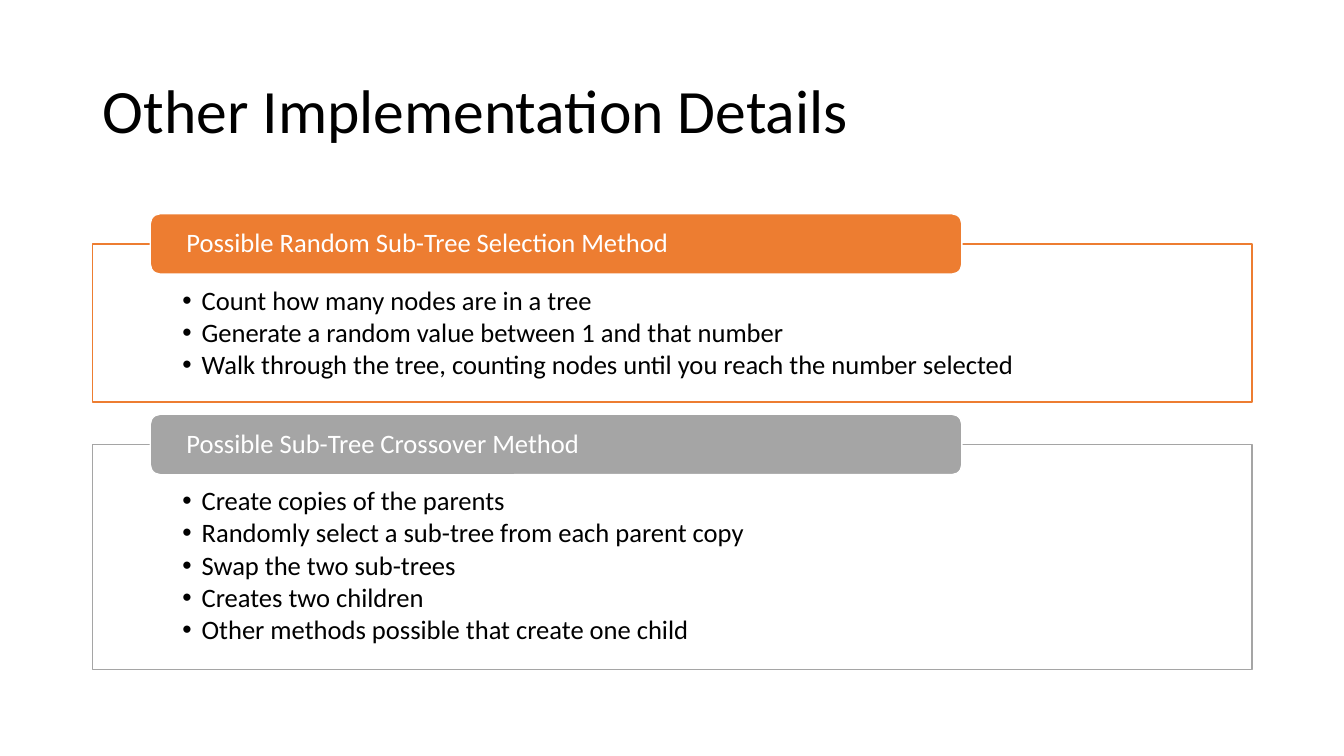
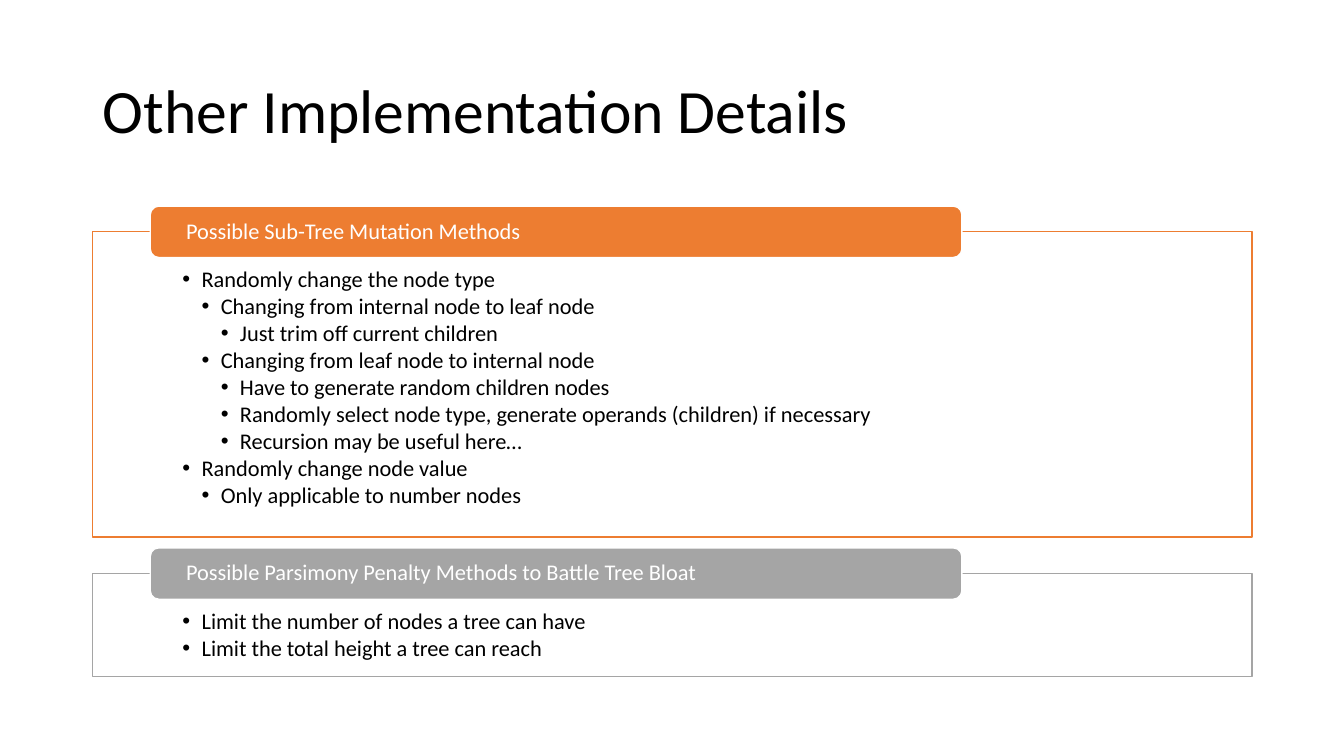
"""Build two slides of outlined boxes with titled tabs."""
from dataclasses import dataclass

from lxml import etree
from pptx import Presentation
from pptx.dml.color import RGBColor
from pptx.enum.shapes import MSO_SHAPE
from pptx.enum.text import MSO_ANCHOR, MSO_AUTO_SIZE, PP_ALIGN
from pptx.oxml.ns import qn
from pptx.util import Inches, Pt

RECT = MSO_SHAPE.RECTANGLE
ROUND = MSO_SHAPE.ROUNDED_RECTANGLE
TOP, MIDDLE = MSO_ANCHOR.TOP, MSO_ANCHOR.MIDDLE
LEFT = PP_ALIGN.LEFT
NO_FIT = MSO_AUTO_SIZE.NONE


@dataclass(frozen=True)
class Theme:
    """Colours, font and sizes shared by the slides."""
    font: str = "Calibri"
    black: str = "000000"
    white: str = "FFFFFF"
    accents: tuple = ("ED7D31", "A5A5A5")
    title: int = 44
    spacing: float = 0.9
    gap: float = 0.13
    indent: float = 0.19
    margin: float = 0.92
    width: float = 11.5


@dataclass(frozen=True)
class Scale:
    """Type size and the lengths in inches that follow from it."""
    size: int
    tab: float
    head: float
    foot: float


@dataclass(frozen=True)
class Panel:
    """One box: its top, height, tab text and (level, text) items."""
    top: float
    height: float
    label: str
    items: tuple


@dataclass(frozen=True)
class Page:
    """One slide: title, scale and panels."""
    title: str
    scale: Scale
    panels: tuple


THEME = Theme()
LARGE = Scale(19, 0.6, 0.43, 0.15)
SMALL = Scale(16, 0.51, 0.36, 0.12)

PAGES = (
    Page("Other Implementation Details", LARGE, (
        Panel(2.42, 1.57, "Possible Random Sub-Tree Selection Method", (
            (1, "Count how many nodes are in a tree"),
            (1, "Generate a random value between 1 and that number"),
            (1, "Walk through the tree, counting nodes until you reach the number selected"),
        )),
        Panel(4.41, 2.23, "Possible Sub-Tree Crossover Method", (
            (1, "Create copies of the parents"),
            (1, "Randomly select a sub-tree from each parent copy"),
            (1, "Swap the two sub-trees"),
            (1, "Creates two children"),
            (1, "Other methods possible that create one child"),
        )),
    )),
    Page("Other Implementation Details", SMALL, (
        Panel(2.3, 3.03, "Possible Sub-Tree Mutation Methods", (
            (1, "Randomly change the node type"),
            (2, "Changing from internal node to leaf node"),
            (3, "Just trim off current children"),
            (2, "Changing from leaf node to internal node"),
            (3, "Have to generate random children nodes"),
            (3, "Randomly select node type, generate operands (children) if necessary"),
            (3, "Recursion may be useful here…"),
            (1, "Randomly change node value"),
            (2, "Only applicable to number nodes"),
        )),
        Panel(5.69, 1.02, "Possible Parsimony Penalty Methods to Battle Tree Bloat", (
            (1, "Limit the number of nodes a tree can have"),
            (1, "Limit the total height a tree can reach"),
        )),
    )),
)


def style(para, size: int, color: str) -> None:
    """Set a paragraph's font, alignment and line spacing."""
    para.alignment = LEFT
    para.line_spacing = THEME.spacing
    para.font.name = THEME.font
    para.font.size = Pt(size)
    para.font.color.rgb = RGBColor.from_string(color)


def bullet(para, level: int) -> None:
    """Give a paragraph a round bullet and a hanging indent."""
    para.level = level
    props = para._p.get_or_add_pPr()
    props.set("marL", str(Inches(THEME.indent * level)))
    props.set("indent", str(-Inches(THEME.indent)))
    etree.SubElement(props, qn("a:buFont")).set("typeface", "Arial")
    etree.SubElement(props, qn("a:buChar")).set("char", "•")


def add_box(slide, kind, area: tuple, fill: str, line: str):
    """Add a flat shape at left, top, width and height in inches."""
    box = slide.shapes.add_shape(kind, *map(Inches, area))
    box.shadow.inherit = False
    box.fill.solid()
    box.fill.fore_color.rgb = RGBColor.from_string(fill)
    box.line.color.rgb = RGBColor.from_string(line)
    box.line.width = Pt(1)
    return box


def set_frame(shape, anchor, side: float, head: float = 0, foot: float = 0):
    """Set a shape's text margins and anchor, and return its frame."""
    frame = shape.text_frame
    frame.word_wrap = True
    frame.auto_size = NO_FIT
    frame.vertical_anchor = anchor
    frame.margin_left = frame.margin_right = Inches(side)
    frame.margin_top, frame.margin_bottom = Inches(head), Inches(foot)
    return frame


def add_title(slide, text: str) -> None:
    """Place and format the title."""
    title = slide.shapes.title
    title.left, title.top = Inches(THEME.margin), Inches(0.4)
    title.width, title.height = Inches(THEME.width), Inches(1.45)
    frame = set_frame(title, MIDDLE, 0.1, 0.05, 0.05)
    frame.text = text
    style(frame.paragraphs[0], THEME.title, THEME.black)


def add_panel(slide, panel: Panel, scale: Scale, accent: str) -> None:
    """Draw a box of bullets with its tab over the top edge."""
    area = (THEME.margin, panel.top, THEME.width, panel.height)
    box = add_box(slide, RECT, area, THEME.white, accent)
    frame = set_frame(box, TOP, 0.89, scale.head, scale.foot)
    frame.text = "\n".join(text for _, text in panel.items)
    for para, (level, _) in zip(frame.paragraphs, panel.items):
        bullet(para, level)
        style(para, scale.size, THEME.black)
        para.space_after = Pt(scale.size * THEME.gap)

    area = (1.49, panel.top - scale.tab / 2, 8.05, scale.tab)
    tab = add_box(slide, ROUND, area, accent, THEME.white)
    frame = set_frame(tab, MIDDLE, 0.33)
    frame.text = panel.label
    style(frame.paragraphs[0], scale.size, THEME.white)


def main() -> None:
    """Build and save the deck."""
    deck = Presentation()
    deck.slide_width, deck.slide_height = Inches(13.33), Inches(7.5)
    for page in PAGES:
        slide = deck.slides.add_slide(deck.slide_layouts[5])
        add_title(slide, page.title)
        for panel, accent in zip(page.panels, THEME.accents):
            add_panel(slide, panel, page.scale, accent)
    deck.save("out.pptx")


if __name__ == "__main__":
    main()
